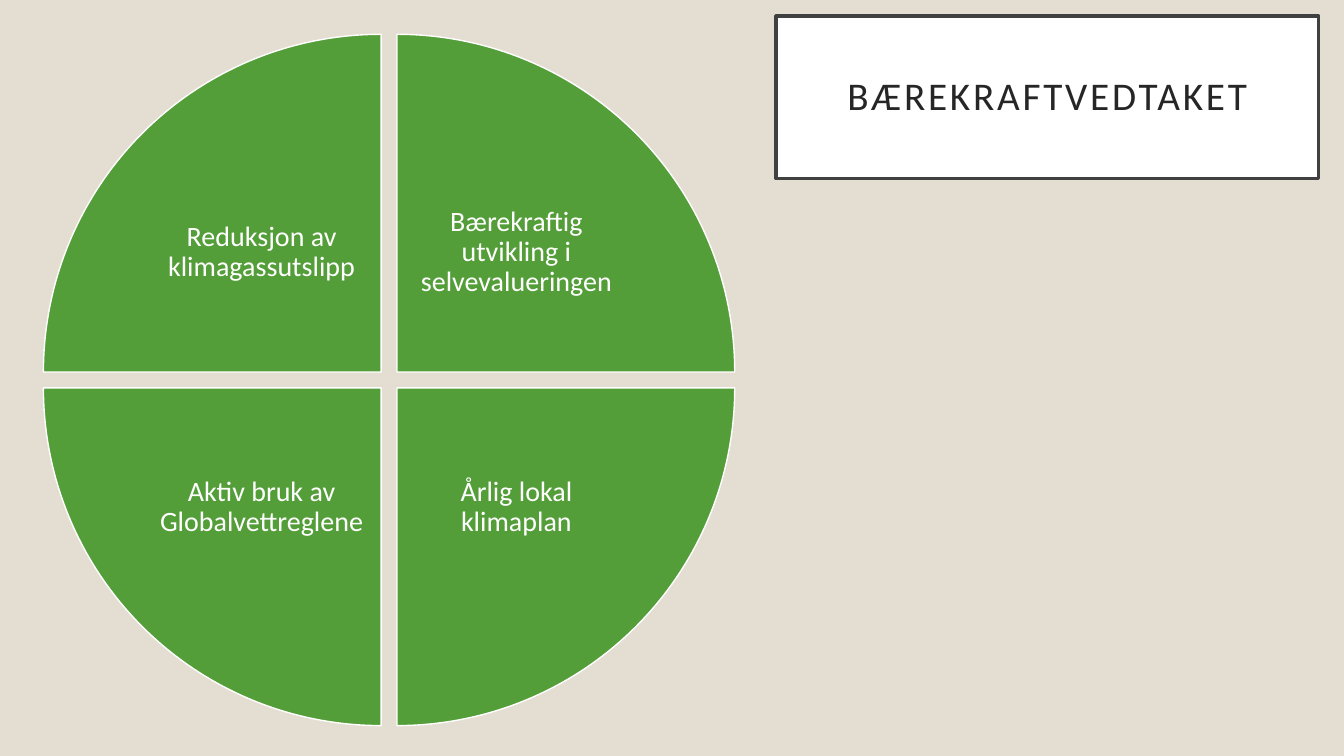
from pptx import Presentation
from pptx.dml.color import RGBColor
from pptx.enum.shapes import MSO_SHAPE
from pptx.enum.text import MSO_ANCHOR, PP_ALIGN
from pptx.util import Pt

BEIGE = RGBColor(0xE3, 0xDE, 0xD1)
GREEN = RGBColor(0x54, 0x9E, 0x39)
WHITE = RGBColor(0xFF, 0xFF, 0xFF)
GRAY = RGBColor(0x40, 0x40, 0x40)
DARK = RGBColor(0x26, 0x26, 0x26)

LEFT, TOP = 31, 24.5
WEDGE, STEP = 241.2, 252.6
LABEL = 170.6
QUARTERS = [
    (0, 0, 0, "Reduksjon av klimagassutslipp"),
    (1, 0, 90, "Bærekraftig utvikling i selvevalueringen"),
    (1, 1, 180, "Årlig lokal klimaplan"),
    (0, 1, 270, "Aktiv bruk av Globalvettreglene"),
]


def write_text(sp, text, size=20, color=WHITE, inset=11.4, after=0, spacing=None):
    tf = sp.text_frame
    tf.word_wrap = True
    tf.vertical_anchor = MSO_ANCHOR.MIDDLE
    tf.margin_left = tf.margin_right = Pt(inset)
    tf.margin_top = tf.margin_bottom = Pt(inset)
    p = tf.paragraphs[0]
    p.alignment = PP_ALIGN.CENTER
    p.line_spacing = 0.9
    p.space_after = Pt(after)
    r = p.add_run()
    r.text = text
    r.font.name = "Calibri"
    r.font.size = Pt(size)
    r.font.color.rgb = color
    if spacing:
        r._r.get_or_add_rPr().set("spc", str(spacing * 100))


def add_shape(s, kind, x, y, w, h, fill, line, width):
    sp = s.shapes.add_shape(kind, Pt(x), Pt(y), Pt(w), Pt(h))
    sp.shadow.inherit = False
    sp.fill.solid()
    sp.fill.fore_color.rgb = fill
    sp.line.color.rgb = line
    sp.line.width = Pt(width)
    return sp


def add_title(s, text):
    sp = add_shape(s, MSO_SHAPE.RECTANGLE, 554.4, 11.5, 387.4, 116, WHITE, GRAY, 2.5)
    write_text(sp, text, size=28, color=DARK, inset=14.4, spacing=2)


def add_quarter(s, col, row, angle, text):
    x, y = LEFT + col * STEP, TOP + row * STEP
    wedge = add_shape(s, MSO_SHAPE.PIE_WEDGE, x, y, WEDGE, WEDGE, GREEN, WHITE, 1)
    wedge.rotation = angle
    inward = WEDGE - LABEL
    label_x, label_y = x + (1 - col) * inward, y + (1 - row) * inward
    label = s.shapes.add_textbox(Pt(label_x), Pt(label_y), Pt(LABEL), Pt(LABEL))
    write_text(label, text, after=7)


def main():
    prs = Presentation()
    prs.slide_width, prs.slide_height = Pt(960), Pt(540)
    s = prs.slides.add_slide(prs.slide_layouts[6])
    s.background.fill.solid()
    s.background.fill.fore_color.rgb = BEIGE
    add_title(s, "BÆREKRAFTVEDTAKET")
    for quarter in QUARTERS:
        add_quarter(s, *quarter)
    prs.save("out.pptx")


if __name__ == "__main__":
    main()
